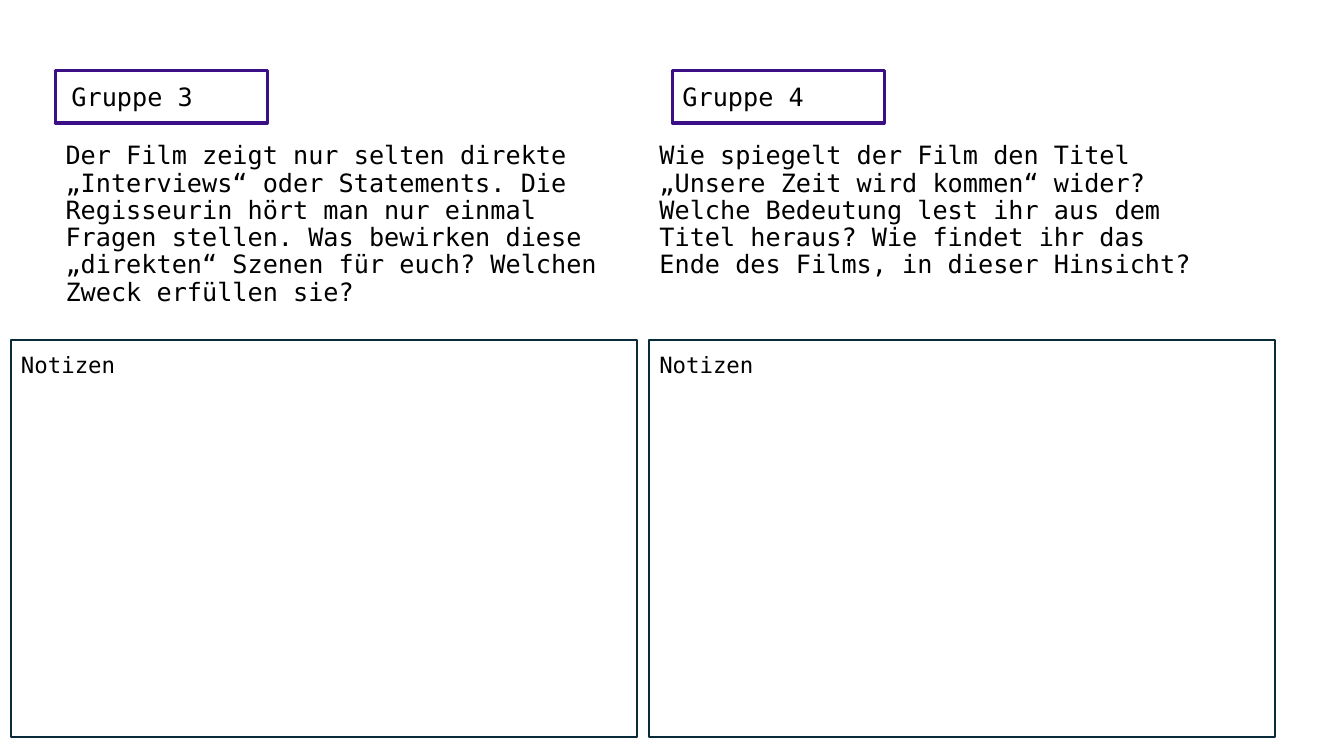
from lxml.etree import SubElement
from pptx import Presentation
from pptx.dml.color import RGBColor
from pptx.enum.shapes import MSO_SHAPE
from pptx.enum.text import MSO_ANCHOR, MSO_AUTO_SIZE, PP_ALIGN
from pptx.oxml.ns import qn
from pptx.util import Inches, Pt

BLACK = RGBColor(0x00, 0x00, 0x00)
PURPLE = RGBColor(0x3B, 0x0F, 0x85)
NAVY = RGBColor(0x09, 0x2A, 0x39)
FONT = "DejaVu Sans Mono"

# label, question, left edges of: question, label frame, label text, notes frame; question height
GROUPS = [
    ("Gruppe 3",
     "Der Film zeigt nur selten direkte „Interviews“ oder Statements. "
     "Die Regisseurin hört man nur einmal Fragen stellen. Was bewirken diese "
     "„direkten“ Szenen für euch? Welchen Zweck erfüllen sie?",
     0.55, 0.55, 0.61, 0.11, 5.51),
    ("Gruppe 4",
     "Wie spiegelt der Film den Titel „Unsere Zeit wird kommen“ wider? "
     "Welche Bedeutung lest ihr aus dem Titel heraus? Wie findet ihr das "
     "Ende des Films, in dieser Hinsicht?",
     6.44, 6.67, 6.67, 6.44, 4),
]


def write_text(frame, text, size=18, color=BLACK, line_spacing=1.0, wrap=True,
               auto_size=MSO_AUTO_SIZE.NONE):
    """Fill a text frame with one formatted paragraph."""
    frame.word_wrap = wrap
    frame.auto_size = auto_size
    frame.vertical_anchor = MSO_ANCHOR.TOP
    para = frame.paragraphs[0]
    para.alignment = PP_ALIGN.LEFT
    para.line_spacing = line_spacing
    para.space_before = Pt(0)
    span = para.add_run()
    span.text = text
    span.font.name = FONT
    span.font.size = Pt(size)
    span.font.color.rgb = color


class Worksheet:
    """Holds the current slide and draws its elements."""

    def __init__(self, page):
        self.page = page

    def question(self, holder, text, left, top, width, height):
        holder.left, holder.top = Inches(left), Inches(top)
        holder.width, holder.height = Inches(width), Inches(height)
        properties = holder.text_frame.paragraphs[0]._p.get_or_add_pPr()
        properties.set("marL", "0")
        properties.set("indent", "0")
        SubElement(properties, qn("a:buNone"))
        write_text(holder.text_frame, text, line_spacing=0.9)

    def frame(self, left, top, width, height, color, weight):
        box = self.page.shapes.add_shape(
            MSO_SHAPE.RECTANGLE, Inches(left), Inches(top), Inches(width), Inches(height))
        box.shadow.inherit = False
        box.fill.background()
        box.line.color.rgb = color
        box.line.width = Pt(weight)

    def label(self, text, left, top, width, height, **style):
        box = self.page.shapes.add_textbox(
            Inches(left), Inches(top), Inches(width), Inches(height))
        write_text(box.text_frame, text, auto_size=MSO_AUTO_SIZE.SHAPE_TO_FIT_TEXT, **style)


def main():
    deck = Presentation()
    deck.slide_width, deck.slide_height = Inches(13.33), Inches(7.5)
    page = deck.slides.add_slide(deck.slide_layouts.get_by_name("Two Content"))
    sheet = Worksheet(page)

    # The page has no heading
    title = page.shapes.title._element
    title.getparent().remove(title)

    # One column per group: question, label, notes
    holders = list(page.placeholders)
    for holder, group in zip(holders, GROUPS):
        name, question, question_left, frame_left, name_left, notes_left, height = group
        sheet.question(holder, question, question_left, 1.37, 5.67, height)
        sheet.frame(frame_left, 0.7, 2.1, 0.52, PURPLE, 2.25)
        sheet.label(name, name_left, 0.76, 1.61, 0.4)
        sheet.frame(notes_left, 3.37, 6.21, 3.94, NAVY, 1.5)
        sheet.label("Notizen", notes_left, 3.43, 1.15, 0.37, size=16, wrap=False)

    deck.save("out.pptx")


if __name__ == "__main__":
    main()
